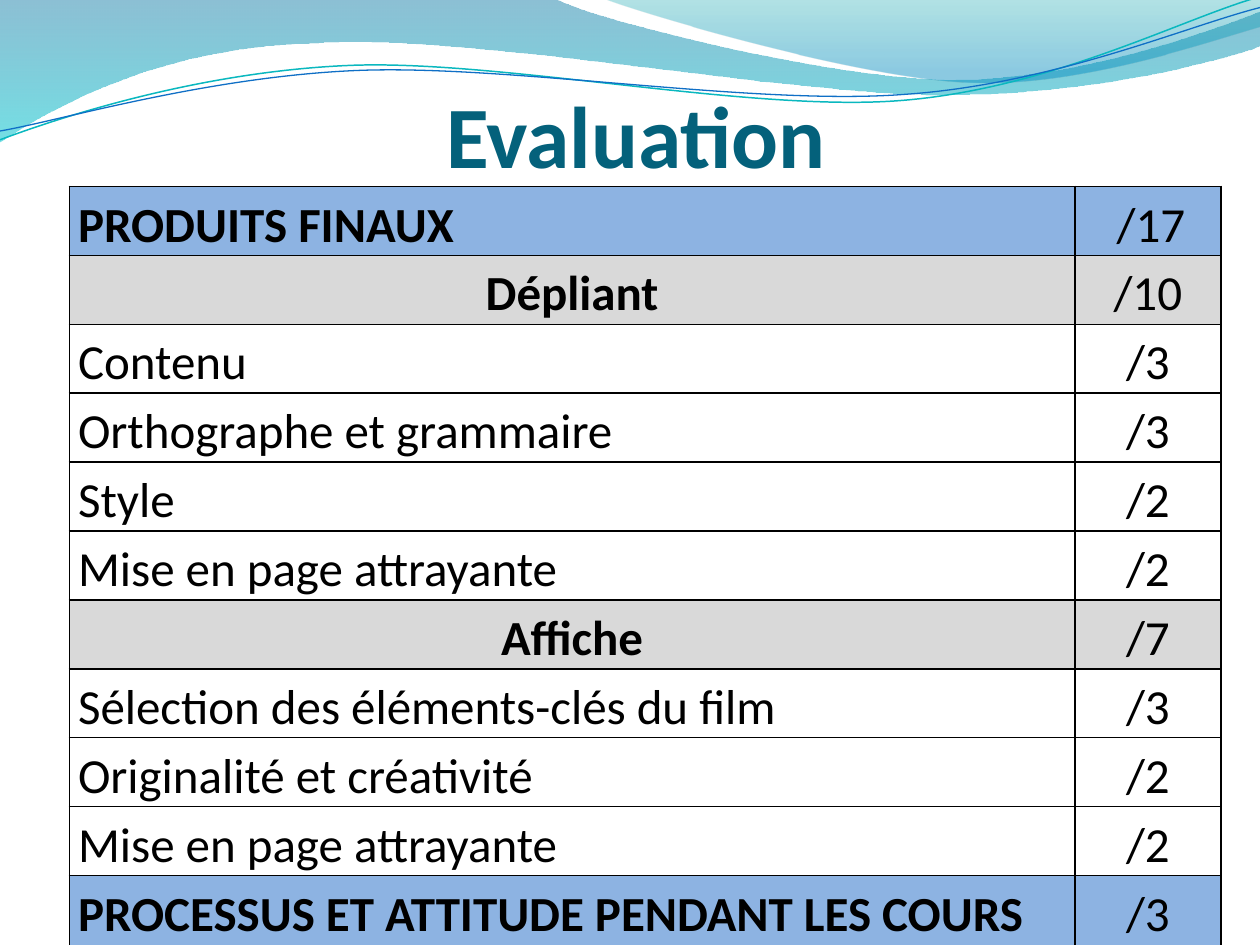
"""Build the Evaluation slide: a wave header above a marking grid."""
from lxml.etree import SubElement
from pptx import Presentation
from pptx.dml.color import RGBColor
from pptx.enum.text import MSO_ANCHOR, MSO_AUTO_SIZE, PP_ALIGN
from pptx.oxml.ns import qn
from pptx.util import Pt

PX = 9144
FONT = "Calibri"
COLORS = {
    "title": "04617B", "text": "000000", "section": "8DB3E2", "product": "D9D9D9",
    "wave_blue": "0074A1", "wave_cyan": "00C6CF",
    "crest_teal": "00A1A9", "crest_blue": "008BBF",
    "teal_line": "0AB8BF", "blue_line": "0F6FC6",
}


def rgb(name):
    return RGBColor.from_string(COLORS[name])


def draw_curve(shapes, start, segments, close):
    """Draw straight (x, y) and cubic (x1, y1, x2, y2, x, y) segments."""
    points = [pair for segment in segments for pair in zip(segment[::2], segment[1::2])]
    builder = shapes.build_freeform(*start, scale=PX)
    builder.add_line_segments(points, close=close)
    curve = builder.convert_to_shape()
    curve.shadow.inherit = False
    outline = next(curve.element.iter(qn("a:path")))
    lines = iter(outline.findall(qn("a:lnTo")))
    for segment in segments:
        first = next(lines)
        if len(segment) == 6:
            bezier = SubElement(outline, qn("a:cubicBezTo"))
            outline.replace(first, bezier)
            bezier.append(first[0])
            for _ in range(2):
                line = next(lines)
                bezier.append(line[0])
                outline.remove(line)
    return curve


prs = Presentation()
prs.slide_width, prs.slide_height = 1000 * PX, 750 * PX
slide = prs.slides.add_slide(prs.slide_layouts[5])

waves = [
    ((0, 0),
     [(440, -1), (476, 17, 664, 63, 758, 63), (853, 63, 958, 26, 1000, 9),
      (1001, 36), (983, 44, 870, 76, 746, 75), (622, 75, 382, 28, 257, 34),
      (129, 36, 46, 83, -1, 113)],
     [(0, "wave_blue", 45), (1, "wave_cyan", 55)]),
    ((479, -1),
     [(509, 11, 682, 62, 769, 65), (856, 69, 961, 32, 1000, 21), (1000, 0)],
     [(0, "crest_teal", 30), (0.8, "crest_blue", 45)]),
]
for start, segments, stops in waves:
    wave = draw_curve(slide.shapes, start, segments, True)
    wave.line.fill.background()
    wave.fill.gradient()
    wave.fill.gradient_angle = 270
    for stop, (position, color, _) in zip(wave.fill.gradient_stops, stops):
        stop.position = position
        stop.color.rgb = rgb(color)
    for srgb, (_, _, opacity) in zip(wave.element.spPr.iter(qn("a:srgbClr")), stops):
        SubElement(srgb, qn("a:alpha"), val=str(opacity * 1000))

ripples = [
    ((0, 111), [(48, 93, 158, 57, 277, 52), (395, 47, 593, 89, 713, 80),
                (833, 71, 938, 15, 998, -2)], "teal_line", 0.85),
    ((0, 104), [(47, 96, 164, 61, 283, 56), (403, 51, 597, 84, 717, 75),
                (836, 67, 941, 21, 1000, 6)], "blue_line", 0.75),
]
for start, segments, color, width in ripples:
    ripple = draw_curve(slide.shapes, start, segments, False)
    ripple.fill.background()
    ripple.line.color.rgb = rgb(color)
    ripple.line.width = Pt(width)

title = slide.shapes.title
title.element.getparent().append(title.element)
title.left, title.top, title.width, title.height = 55 * PX, 23 * PX, 900 * PX, 125 * PX
heading = title.text_frame
heading.text = "Evaluation"
heading.auto_size = MSO_AUTO_SIZE.NONE
heading.vertical_anchor = MSO_ANCHOR.BOTTOM
heading.margin_left = heading.margin_right = heading.margin_bottom = 0
heading.margin_top = 5 * PX
heading.paragraphs[0].alignment = PP_ALIGN.CENTER
heading_font = heading.paragraphs[0].runs[0].font
heading_font.name, heading_font.size, heading_font.bold = FONT, Pt(50), True
heading_font.color.rgb = rgb("title")

criteria = [
    ("PRODUITS FINAUX", "\t/17", "section"),
    ("Dépliant", "/10", "product"),
    ("Contenu", "/3", None),
    ("Orthographe et grammaire", "/3", None),
    ("Style", "/2", None),
    ("Mise en page attrayante", "/2", None),
    ("Affiche", "/7", "product"),
    ("Sélection des éléments-clés du film", "/3", None),
    ("Originalité et créativité", "/2", None),
    ("Mise en page attrayante", "/2", None),
    ("PROCESSUS ET ATTITUDE PENDANT LES COURS", "/3", "section"),
]
grid = slide.shapes.add_table(
    len(criteria), 2, 55 * PX, 148 * PX, 914 * PX, 554 * PX).table
grid.first_row = grid.horz_banding = False
grid.columns[0].width, grid.columns[1].width = 798 * PX, 116 * PX
for row in grid.rows:
    row.height = 48 * PX
grid.rows[len(criteria) - 1].height = 74 * PX

for row_index, (criterion, mark, level) in enumerate(criteria):
    for column, wording in enumerate((criterion, mark)):
        cell = grid.cell(row_index, column)
        cell.margin_left = cell.margin_right = 7 * PX
        cell.margin_top = cell.margin_bottom = 0
        cell_properties = cell._tc.get_or_add_tcPr()
        for side in ("lnL", "lnR", "lnT", "lnB"):
            border = SubElement(cell_properties, qn(f"a:{side}"), w=str(Pt(1)))
            border_fill = SubElement(border, qn("a:solidFill"))
            SubElement(border_fill, qn("a:srgbClr"), val=COLORS["text"])
        if level:
            cell.fill.solid()
            cell.fill.fore_color.rgb = rgb(level)
        else:
            cell.fill.background()

        cell.text_frame.text = wording
        paragraph = cell.text_frame.paragraphs[0]
        if "\t" in wording:
            tabs = SubElement(paragraph._p.get_or_add_pPr(), qn("a:tabLst"))
            SubElement(tabs, qn("a:tab"), pos=str(32 * PX), algn="ctr")
        centred = column == 1 or level == "product"
        paragraph.alignment = PP_ALIGN.CENTER if centred else PP_ALIGN.LEFT
        paragraph.line_spacing = 1.15
        font = paragraph.runs[0].font
        font.name, font.size = FONT, Pt(28)
        font.bold = column == 0 and level is not None
        font.color.rgb = rgb("text")

prs.save("out.pptx")
